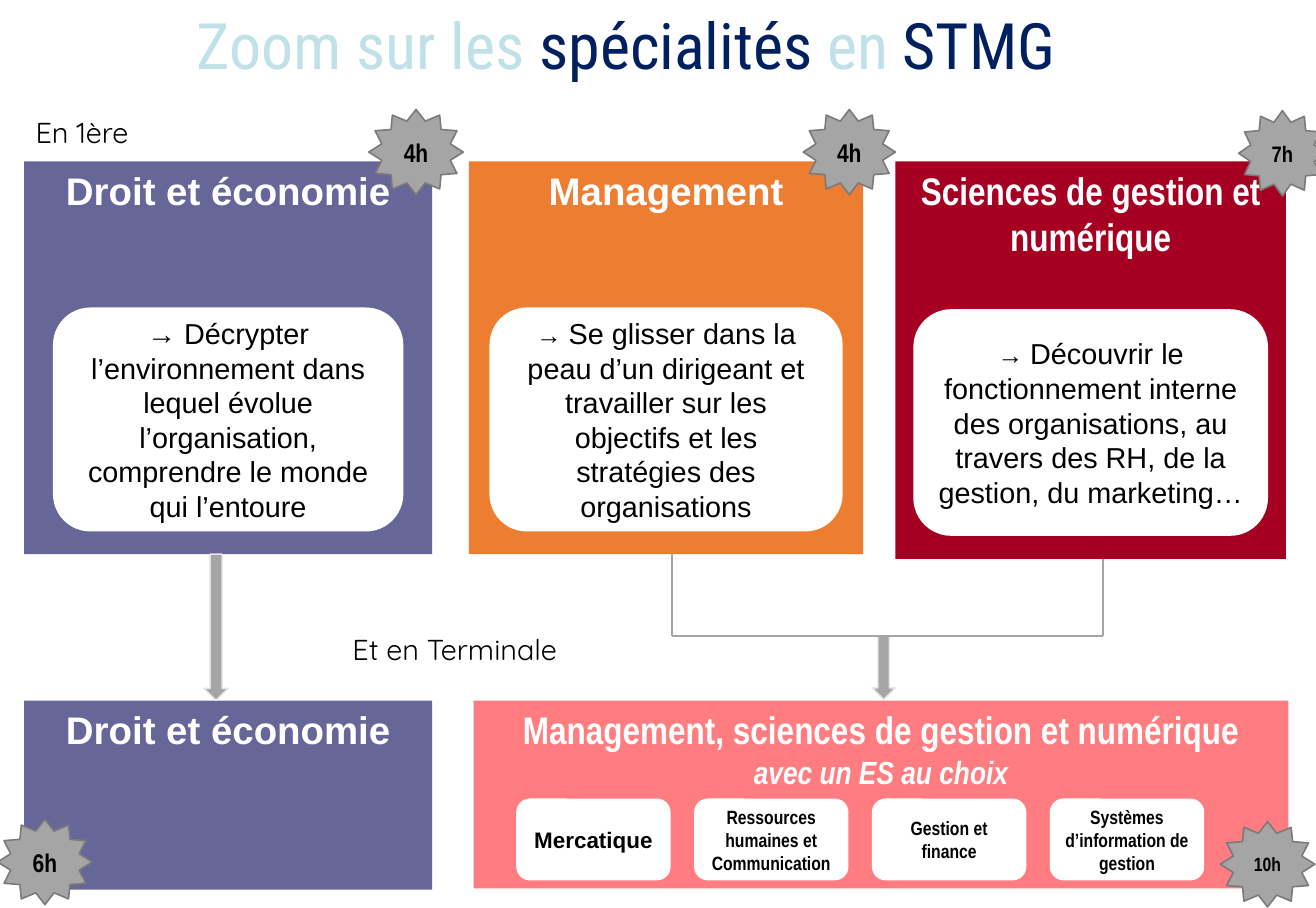
import pptx
import pptx.util
import pptx.dml.color
import pptx.enum.shapes
import pptx.enum.text
import pptx.oxml.ns
import lxml.etree

Inches, Pt = pptx.util.Inches, pptx.util.Pt
KIND = pptx.enum.shapes.MSO_SHAPE
ALIGN = pptx.enum.text.PP_ALIGN
ANCHOR = pptx.enum.text.MSO_ANCHOR
PAGE = (0, 0, 11.42, 7.88)
HEX = {
    "white": "FFFFFF", "black": "000000", "pale": "C0E1E8", "navy": "002060",
    "violet": "666699", "orange": "ED7D31", "red": "A50021", "pink": "FF7C80",
    "grey": "A5A5A5", "dark": "7A7A7A", "light": "E7E6E6",
}


def tint(name):
    """Return the named colour."""
    return pptx.dml.color.RGBColor.from_string(HEX[name])


def part(box, x, y, wide, high):
    """Return a box from percentages of another box."""
    left, top, width, height = box
    return (left + width * x / 100, top + height * y / 100,
            width * wide / 100, height * high / 100)


def draw(slide, kind, box, fill, line=None):
    """Add a plain filled shape."""
    shape = slide.shapes.add_shape(kind, *map(Inches, box))
    shape.shadow.inherit = False
    shape.fill.solid()
    shape.fill.fore_color.rgb = tint(fill)
    if line:
        shape.line.color.rgb = tint(line)
        shape.line.width = Pt(1)
    else:
        shape.line.fill.background()
    return shape


def style(run, size, face="Arial", color="black", bold=False, italic=False):
    """Format one run."""
    font = run.font
    font.size, font.name, font.bold, font.italic = Pt(size), face, bold, italic
    font.color.rgb = tint(color)


def write(shape, text, size, anchor=ANCHOR.MIDDLE, **look):
    """Put one centred paragraph into a shape."""
    frame = shape.text_frame
    frame.word_wrap = True
    frame.vertical_anchor = anchor
    frame.text = text
    frame.paragraphs[0].alignment = ALIGN.CENTER
    style(frame.paragraphs[0].runs[0], size, **look)
    return frame


def label(slide, box, runs, size, face):
    """Add a left-aligned text box of coloured runs."""
    frame = slide.shapes.add_textbox(*map(Inches, box)).text_frame
    frame.word_wrap = True
    for text, color in runs:
        run = frame.paragraphs[0].add_run()
        run.text = text
        style(run, size, face, color)


def badge(slide, box, x, y, wide, text, size=16):
    """Add an hours star centred on a point of the box."""
    left, top, _, _ = part(box, x, y, 0, 0)
    _, _, width, height = part(PAGE, 0, 0, wide, 9.39)
    spot = (left - width / 2, top - height / 2, width, height)
    star = draw(slide, KIND.STAR_12_POINT, spot, "grey", "dark")
    frame = write(star, text, size, face="Arial Narrow", bold=True)
    frame.word_wrap = False


def panel(slide, box, fill, title, face="Arial"):
    """Add a coloured block with its heading."""
    block = draw(slide, KIND.RECTANGLE, box, fill)
    return write(block, title, 24, ANCHOR.TOP, face=face, color="white", bold=True)


def card(slide, box, side, text, size=16, bold=False):
    """Add the white description card of a subject."""
    spot = part(box, side, 37.2, 100 - 2 * side, 57)
    frame = write(draw(slide, KIND.ROUNDED_RECTANGLE, spot, "white"),
                  "→ ", size, bold=bold)
    run = frame.paragraphs[0].add_run()
    run.text = text
    style(run, 18)


def choice(slide, box):
    """Add the final-year block with its four options."""
    face = "Arial Narrow"
    frame = panel(slide, box, "pink",
                  "Management, sciences de gestion et numérique", face)
    para = frame.add_paragraph()
    para.text = "avec un ES au choix"
    para.alignment = ALIGN.CENTER
    style(para.runs[0], 20, face, "white", True, True)
    badge(slide, box, 97.45, 87.1, 7.18, "10h", 12)
    options = [("Mercatique", 14, "Arial"),
               ("Ressources humaines et Communication", 12, face),
               ("Gestion et finance", 12, face),
               ("Systèmes d’information de gestion", 12, face)]
    for col, (text, size, font) in enumerate(options):
        spot = part(box, 5.23 + 21.83 * col, 52.15, 18.95, 43.56)
        write(draw(slide, KIND.ROUNDED_RECTANGLE, spot, "white"),
              text, size, face=font, bold=True)


def link(slide, box, start, end):
    """Add a grey line between two points of the box."""
    ends = [Inches(v) for point in (start, end) for v in part(box, *point, 0, 0)[:2]]
    line = slide.shapes.add_connector(pptx.enum.shapes.MSO_CONNECTOR.STRAIGHT, *ends)
    line.line.color.rgb = tint("grey")
    line.line.width = Pt(1.5)
    lxml.etree.SubElement(line._element.spPr, pptx.oxml.ns.qn("a:effectLst"))


def merge(slide, box):
    """Join two subjects into one arrow."""
    bar = 56.35
    link(slide, box, (0, 0), (0, bar))
    link(slide, box, (100, 3.2), (100, bar))
    draw(slide, KIND.DOWN_ARROW, part(box, 46.5, bar, 5.35, 100 - bar), "grey", "light")
    link(slide, box, (0, bar), (100, bar))


def main():
    """Build the slide."""
    deck = pptx.Presentation()
    deck.slide_width, deck.slide_height = Inches(PAGE[2]), Inches(PAGE[3])
    slide = deck.slides.add_slide(deck.slide_layouts[6])
    label(slide, part(PAGE, 14.1, 0, 68.3, 11.04),
          [("Zoom sur les ", "pale"), ("spécialités", "navy"),
           (" en ", "pale"), ("STMG", "navy")], 40, "Roboto Condensed")

    law = part(PAGE, 1.84, 17.77, 31, 43.27)
    panel(slide, law, "violet", "Droit et économie")
    card(slide, law, 7.06, "Décrypter l’environnement dans lequel évolue "
         "l’organisation, comprendre le monde qui l’entoure", 18)
    badge(slide, law, 96.05, -2.35, 7.18, "4h")

    lead = part(PAGE, 35.64, 17.77, 29.95, 43.27)
    panel(slide, lead, "orange", "Management")
    card(slide, lead, 5.2, "Se glisser dans la peau d’un dirigeant et travailler "
         "sur les objectifs et les stratégies des organisations")
    badge(slide, lead, 96.5, -2.35, 7, "4h")

    firm = part(PAGE, 68.04, 17.77, 29.68, 43.78)
    panel(slide, firm, "red", "Sciences de gestion et numérique", "Arial Narrow")
    card(slide, firm, 4.6, "Découvrir le fonctionnement interne des organisations, "
         "au travers des RH, de la gestion, du marketing…", bold=True)
    badge(slide, firm, 99.1, -2.03, 6.65, "7h", 14)

    label(slide, part(PAGE, 1.84, 12.06, 10.86, 5.08),
          [("En 1ère", "black")], 18, "Quicksand")
    label(slide, part(PAGE, 25.92, 68.91, 19.88, 5.08),
          [("Et en Terminale", "black")], 18, "Quicksand")

    last = part(PAGE, 1.84, 77.16, 31, 20.81)
    panel(slide, last, "violet", "Droit et économie")
    draw(slide, KIND.DOWN_ARROW, part(PAGE, 15.5, 61.04, 1.84, 16.12), "grey", "light")
    badge(slide, last, 5.08, 85.4, 7.18, "6h")
    choice(slide, part(PAGE, 35.99, 77.16, 61.91, 20.69))
    merge(slide, part(PAGE, 51.05, 61.04, 32.75, 15.99))
    deck.save("out.pptx")


if __name__ == "__main__":
    main()
